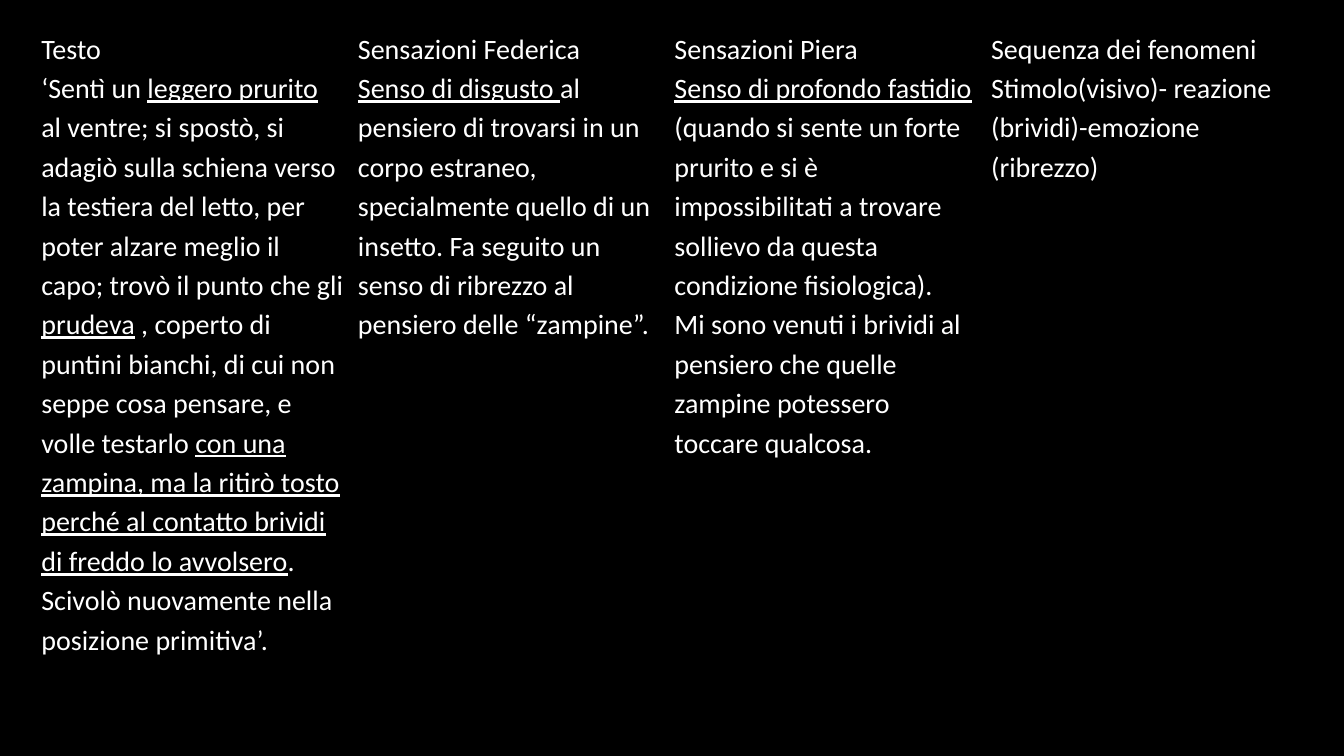
import pptx
import pptx.dml.color
import pptx.oxml.ns
import pptx.util
from lxml import etree

Inches = pptx.util.Inches


def color(hex_string):
    return pptx.dml.color.RGBColor.from_string(hex_string)


def add_border(cell, side, hex_string, points):
    qualify = pptx.oxml.ns.qn
    properties = cell._tc.get_or_add_tcPr()
    line = etree.SubElement(properties, qualify(f"a:{side}"), w=str(pptx.util.Pt(points)))
    fill = etree.SubElement(line, qualify("a:solidFill"))
    etree.SubElement(fill, qualify("a:srgbClr"), val=hex_string)


# Column heading and its paragraphs; underscores enclose underlined words
columns = [
    ("Testo", [
        "‘Sentì un _leggero prurito _al ventre; si spostò, si adagiò sulla schiena "
        "verso la testiera del letto, per poter alzare meglio il capo; trovò il punto "
        "che gli _prudeva_ , coperto di puntini bianchi, di cui non seppe cosa pensare, "
        "e volle testarlo _con una zampina, ma la ritirò tosto perché al contatto "
        "brividi di freddo lo avvolsero_. Scivolò nuovamente nella posizione primitiva’."]),
    ("Sensazioni Federica", [
        "_Senso di disgusto _al pensiero di trovarsi in un corpo estraneo, specialmente "
        "quello di un insetto. Fa seguito un senso di ribrezzo al pensiero delle “zampine”."]),
    ("Sensazioni Piera", [
        "_Senso di profondo fastidio _(quando si sente un forte prurito e si è "
        "impossibilitati a trovare sollievo da questa condizione fisiologica).",
        "Mi sono venuti i brividi al pensiero che quelle zampine potessero toccare qualcosa."]),
    ("Sequenza dei fenomeni", [
        "Stimolo(visivo)- reazione (brividi)-emozione (ribrezzo)"]),
]
font_format = {"name": "Calibri", "size": pptx.util.Pt(20), "bold": False}
cell_format = {"margin_left": Inches(0.07), "margin_right": Inches(0.07),
               "margin_top": 0, "margin_bottom": 0}

# Slide with a black background
presentation = pptx.Presentation()
presentation.slide_width = Inches(13.33)
presentation.slide_height = Inches(7.5)
slide = presentation.slides.add_slide(presentation.slide_layouts[6])
slide.background.fill.solid()
slide.background.fill.fore_color.rgb = color("000000")

# Table grid
column_width = Inches(3.14)
row_heights = [Inches(0.38), Inches(6.42)]
table = slide.shapes.add_table(
    len(row_heights), len(columns), Inches(0.34), Inches(0.27),
    column_width * len(columns), sum(row_heights)).table
table.first_row = False
table.horz_banding = False
for row, height in zip(table.rows, row_heights):
    row.height = height

# Cells: heading above, reading notes below
for column_index, (heading, notes) in enumerate(columns):
    table.columns[column_index].width = column_width
    for row_index, paragraphs in enumerate([[heading], notes]):
        cell = table.cell(row_index, column_index)
        for name, value in cell_format.items():
            setattr(cell, name, value)
        for side in ("lnL", "lnR", "lnT", "lnB"):
            add_border(cell, side, "000000", 1)
        cell.fill.background()

        frame = cell.text_frame
        for paragraph_index, text in enumerate(paragraphs):
            paragraph = frame.add_paragraph() if paragraph_index else frame.paragraphs[0]
            paragraph.line_spacing = 1.15
            for part_index, part in enumerate(text.split("_")):
                if not part:
                    continue
                run = paragraph.add_run()
                run.text = part
                for name, value in font_format.items():
                    setattr(run.font, name, value)
                run.font.underline = part_index % 2 == 1
                run.font.color.rgb = color("FFFFFF")

presentation.save("out.pptx")
